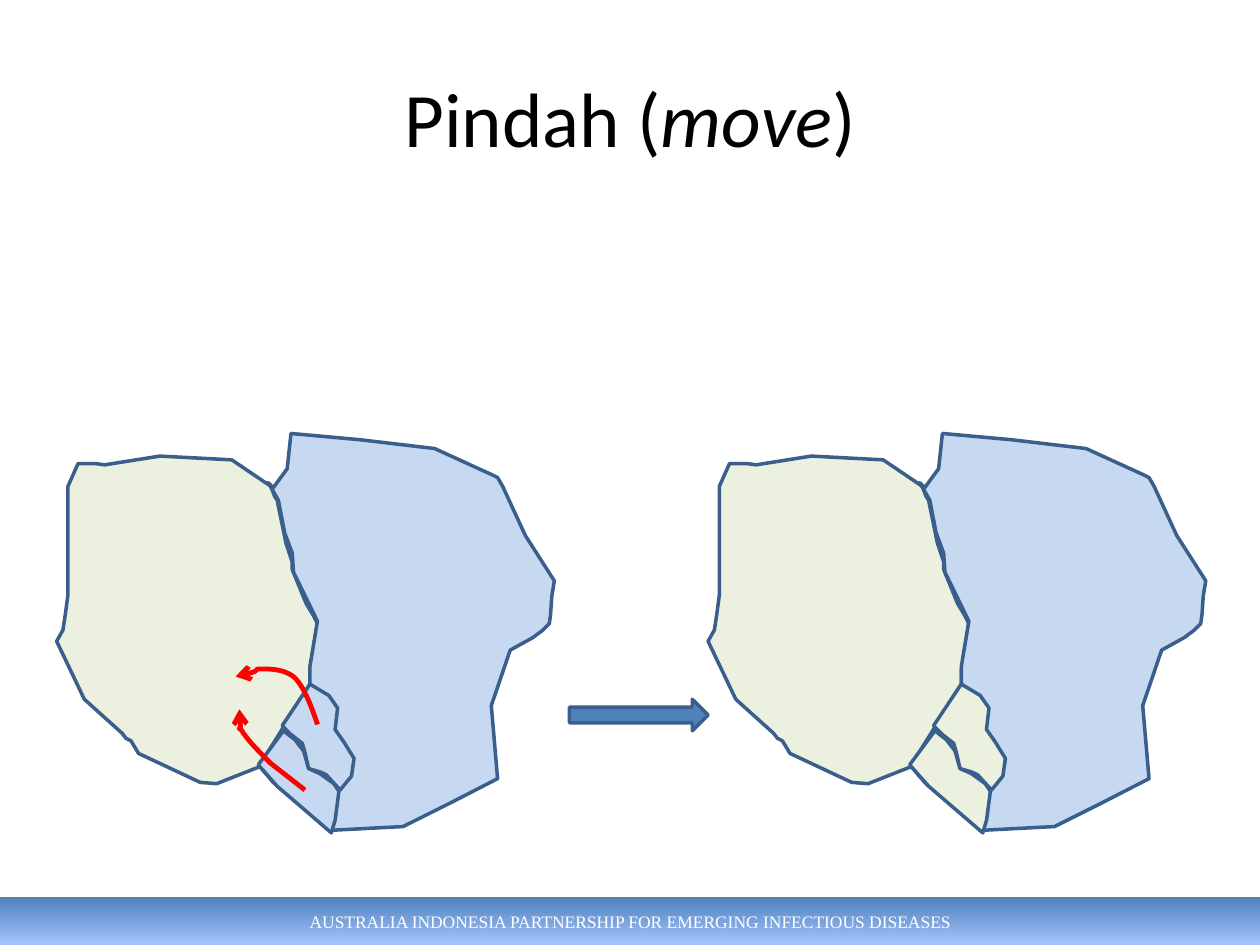
import pptx
import pptx.util
import pptx.dml.color
import pptx.enum.shapes
import pptx.enum.text
import pptx.oxml
import pptx.oxml.ns

# Content: coordinates are in inches on the slide
TITLE = [("Pindah (", False), ("move", True), (")", False)]
FOOTER = "AUSTRALIA INDONESIA PARTNERSHIP FOR EMERGING INFECTIOUS DISEASES"
COLORS = {
    "green": "EBF1DE", "blue": "C6D9F1", "outline": "3A5F8C", "arrow": "4F81BD",
    "footer_top": "4F81BD", "footer_bottom": "A4C4FF", "move": "FF0000",
    "title": "000000", "footer_text": "FFFFFF",
}
WEST = [
    (0.83, 3.69), (1.27, 3.62), (1.84, 3.65), (2.15, 3.86), (2.18, 3.94), (2.2, 3.97),
    (2.27, 4.31), (2.32, 4.46), (2.32, 4.52), (2.43, 4.79), (2.49, 4.89), (2.52, 4.95),
    (2.46, 5.32), (2.46, 5.45), (2.05, 6.09), (1.72, 6.22), (1.59, 6.21), (1.1, 5.98),
    (1.04, 5.88), (1, 5.86), (0.97, 5.82), (0.67, 5.55), (0.45, 5.09), (0.5, 5),
    (0.52, 4.87), (0.54, 4.72), (0.54, 4.32), (0.54, 3.86), (0.62, 3.68), (0.76, 3.68),
]
EAST = [
    (2.13, 3.83), (2.21, 3.97), (2.26, 4.23), (2.32, 4.39), (2.33, 4.54), (2.52, 4.93),
    (2.46, 5.29), (2.46, 5.43), (2.06, 6.08), (2.17, 6.21), (2.62, 6.59), (3.2, 6.56),
    (3.56, 6.38), (3.95, 6.18), (3.9, 5.6), (4.05, 5.16), (4.14, 5.11), (4.23, 5.06),
    (4.31, 5), (4.36, 4.95), (4.37, 4.88), (4.38, 4.73), (4.4, 4.61), (4.17, 4.25),
    (3.99, 3.86), (3.95, 3.79), (3.91, 3.77), (3.45, 3.56), (2.86, 3.49), (2.31, 3.44),
    (2.28, 3.72), (2.17, 3.87),
]
SOUTH_VILLAGE = [
    (2.05, 6.07), (2.25, 5.8), (2.34, 5.87), (2.41, 5.96), (2.45, 6.1), (2.54, 6.14),
    (2.65, 6.22), (2.69, 6.28), (2.68, 6.36), (2.66, 6.51), (2.63, 6.61), (2.2, 6.24),
]
NORTH_VILLAGE = [
    (2.24, 5.76), (2.46, 5.43), (2.61, 5.52), (2.68, 5.62), (2.66, 5.79), (2.73, 5.89),
    (2.81, 6.02), (2.79, 6.16), (2.7, 6.27), (2.59, 6.15), (2.55, 6.13), (2.45, 6.1),
    (2.42, 5.97), (2.4, 5.9), (2.31, 5.83),
]
# Each map: horizontal offset and colour of the villages (before, after)
MAPS = [(0, "blue"), (5.17, "green")]
# Cubic curves: start point, then two controls and an end for each piece
MOVES = [
    [(2.52, 5.75), (2.47, 5.6), (2.41, 5.45), (2.34, 5.38), (2.26, 5.31), (2.15, 5.31),
     (2.07, 5.31), (1.99, 5.31), (2.12, 5.32), (1.87, 5.37)],
    [(2.42, 6.27), (2.33, 6.2), (2.24, 6.13), (2.15, 6.06), (2.07, 5.98), (1.96, 5.87),
     (1.92, 5.8), (1.87, 5.73), (1.93, 5.89), (1.9, 5.63)],
]
STEPS = 12


def inch(value):
    return pptx.util.Cm(value * 2.54)


def rgb(name):
    return pptx.dml.color.RGBColor.from_string(COLORS[name])


def style(sp, fill, line, width):
    sp.shadow.inherit = False
    if fill:
        sp.fill.solid()
        sp.fill.fore_color.rgb = rgb(fill)
    else:
        sp.fill.background()
    sp.line.color.rgb = rgb(line)
    sp.line.width = pptx.util.Pt(width)


def outline(shapes, points, dx=0, close=True):
    pts = [(inch(x + dx), inch(y)) for x, y in points]
    builder = shapes.build_freeform(*pts[0], scale=1.0)
    builder.add_line_segments(pts[1:], close=close)
    return builder.convert_to_shape()


def curve(points):
    result = [points[0]]
    for i in range(0, len(points) - 1, 3):
        piece = points[i:i + 4]
        for n in range(1, STEPS + 1):
            t = n / STEPS
            weights = ((1 - t) ** 3, 3 * t * (1 - t) ** 2, 3 * t ** 2 * (1 - t), t ** 3)
            result.append(tuple(sum(w * p[k] for w, p in zip(weights, piece)) for k in (0, 1)))
    return result


prs = pptx.Presentation()
prs.slide_width, prs.slide_height = inch(10), inch(7.5)
s = prs.slides.add_slide(prs.slide_layouts[5])
SHAPE = pptx.enum.shapes.MSO_SHAPE
CENTER = pptx.enum.text.PP_ALIGN.CENTER
MIDDLE = pptx.enum.text.MSO_ANCHOR.MIDDLE

# Footer band
sp = s.shapes.add_shape(SHAPE.RECTANGLE, 0, inch(7.12), inch(10), inch(0.38))
sp.shadow.inherit = False
sp.line.fill.background()
sp.fill.gradient()
sp.fill.gradient_angle = 270
for stop, name in zip(sp.fill.gradient_stops, ("footer_top", "footer_bottom")):
    stop.color.rgb = rgb(name)
tf = sp.text_frame
tf.text = FOOTER
tf.vertical_anchor = MIDDLE
p = tf.paragraphs[0]
p.alignment = CENTER
font = p.runs[0].font
font.name, font.size = "Times New Roman", pptx.util.Pt(10)
font.color.rgb = rgb("footer_text")

# Title
title = s.shapes.title
title.left, title.top, title.width, title.height = map(inch, (0.5, 0.3, 9, 1.25))
tf = title.text_frame
tf.vertical_anchor = MIDDLE
p = tf.paragraphs[0]
p.alignment = CENTER
for text, italic in TITLE:
    r = p.add_run()
    r.text = text
    r.font.name, r.font.size, r.font.italic = "Calibri", pptx.util.Pt(44), italic
    r.font.color.rgb = rgb("title")

# Maps before and after the move
for dx, village in MAPS:
    group = s.shapes.add_group_shape()
    regions = [(WEST, "green"), (EAST, "blue"), (SOUTH_VILLAGE, village), (NORTH_VILLAGE, village)]
    for points, fill in regions:
        style(outline(group.shapes, points, dx), fill, "outline", 2)

# Arrow between the maps
sp = s.shapes.add_shape(SHAPE.RIGHT_ARROW, *map(inch, (4.52, 5.55, 1.1, 0.25)))
style(sp, "arrow", "outline", 2)

# Curved arrows showing the move
for points in MOVES:
    sp = outline(s.shapes, curve(points), close=False)
    style(sp, None, "move", 2.75)
    ln = sp.line._get_or_add_ln()
    ln.append(pptx.oxml.parse_xml(
        f'<a:tailEnd {pptx.oxml.ns.nsdecls("a")} type="arrow"/>'))

prs.save("out.pptx")
